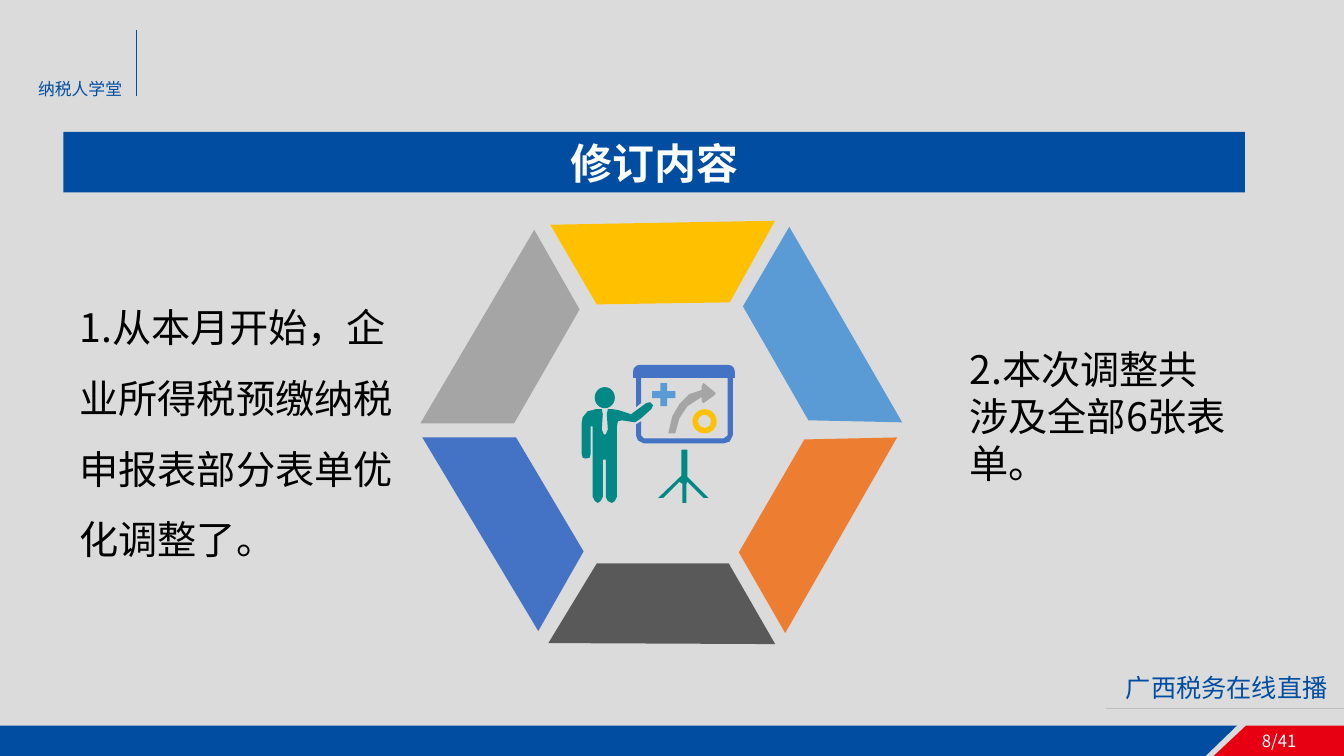
from dataclasses import dataclass

from lxml import etree
from pptx import Presentation
from pptx.dml.color import RGBColor
from pptx.enum.shapes import MSO_CONNECTOR, MSO_SHAPE
from pptx.enum.text import MSO_ANCHOR, PP_ALIGN
from pptx.oxml.ns import qn
from pptx.shapes.autoshape import Shape
from pptx.shapes.shapetree import GroupShapes, SlideShapes
from pptx.util import Emu, Inches, Pt

RECTANGLE = MSO_SHAPE.RECTANGLE
OVAL = MSO_SHAPE.OVAL
DONUT = MSO_SHAPE.DONUT
CROSS = MSO_SHAPE.CROSS
ROUNDED_TOP = MSO_SHAPE.ROUND_2_SAME_RECTANGLE
STRAIGHT = MSO_CONNECTOR.STRAIGHT
LEFT, CENTER = PP_ALIGN.LEFT, PP_ALIGN.CENTER
TOP, MIDDLE = MSO_ANCHOR.TOP, MSO_ANCHOR.MIDDLE

CELL = Inches(0.1)
COLUMNS, ROWS = 133.33, 75
FONT = "Noto Sans CJK SC"
BACKGROUND, BLUE, RED = "DBDBDB", "004DA1", "E60012"
WHITE, BLACK, RULE_GRAY = "FFFFFF", "000000", "BFBFBF"
TEAL, GRAY, GOLD = "028985", "A5A5A5", "FFC000"
SKY, ORANGE, CHARCOAL, ROYAL = "5B9BD5", "ED7D31", "595959", "4472C4"

Shapes = SlideShapes | GroupShapes
Point = tuple[float, float]


@dataclass(frozen=True)
class Area:
    column: float
    row: float
    columns: float
    rows: float


@dataclass(frozen=True)
class Polygon:
    color: str
    corners: list[Point]


@dataclass(frozen=True)
class Preset:
    kind: MSO_SHAPE
    area: Area
    color: str
    adjustments: tuple[float, ...] = ()


@dataclass(frozen=True)
class Rule:
    start: Point
    end: Point
    color: str


@dataclass(frozen=True)
class Label:
    text: str
    area: Area
    size: float
    color: str
    line_spacing: float | None = None
    top_inset: float = 0.5


FOOTER = [
    Polygon(BLUE, [(0, 72), (122.7, 72), (119.6, ROWS), (0, ROWS)]),
    Polygon(RED, [(123.6, 72), (COLUMNS, 72), (COLUMNS, ROWS), (120.4, ROWS)]),
]
RULES = [
    Rule((13.5, 3), (13.5, 9.5), BLUE),
    Rule((109.7, 70.3), (COLUMNS, 70.3), RULE_GRAY),
]
LABELS = [
    Label("8/41", Area(124.2, 72, 8.1, 4), 12, WHITE),
    Label("纳税人学堂", Area(2.8, 7.3, 10.8, 3), 12, BLUE),
    Label("广西税务在线直播", Area(110.7, 66.2, 25.9, 4), 18, BLUE),
    Label("1.从本月开始，企业所得税预缴纳税申报表部分表单优化调整了。",
          Area(6.9, 15.3, 34.8, 53.5), 28, BLACK, 1.5, 12.5),
    Label("2.本次调整共涉及全部6张表单。", Area(95.2, 33.8, 27.8, 18.2), 28, BLACK),
]
BANNER = Preset(RECTANGLE, Area(6.3, 13.1, 117.2, 6), BLUE)
HEXAGON = [
    Polygon(GRAY, [(53, 22.8), (41.7, 42), (51, 42), (57.5, 30.7)]),
    Polygon(GOLD, [(76.9, 21.9), (54.6, 22.3), (59.2, 30.2), (72.4, 30)]),
    Polygon(SKY, [(89.5, 41.9), (78.3, 22.5), (73.7, 30.4), (80.2, 41.7)]),
    Polygon(ORANGE, [(77.9, 62.8), (89, 43.4), (79.8, 43.6), (73.3, 54.8)]),
    Polygon(CHARCOAL, [(54.4, 63.8), (76.9, 63.9), (72.3, 55.9), (59.2, 55.9)]),
    Polygon(ROYAL, [(41.9, 43.4), (53.4, 62.6), (57.9, 54.7), (51.2, 43.4)]),
]
ICON_PRESETS = [
    Preset(OVAL, Area(59, 38.4, 2, 2.1), TEAL),
    Preset(DONUT, Area(68.7, 40.6, 2.4, 2.4), GOLD, (0.23,)),
    Preset(CROSS, Area(64.7, 38, 2.3, 2.3), SKY, (0.35,)),
    Preset(ROUNDED_TOP, Area(62.8, 36.2, 10.1, 1.3), ROYAL, (0.5, 0)),
]
ICON_POLYGONS = [
    Polygon(TEAL, [
        (64.8, 40.2), (64.5, 39.9), (64.1, 40), (62.6, 41.1), (61.4, 40.7),
        (60.8, 40.6), (60.3, 40.6), (60.2, 41.1), (60.3, 42.6), (60.1, 43.1),
        (59.9, 43.1), (59.7, 42.6), (59.8, 41.1), (59.7, 40.6), (59.1, 40.6),
        (58.3, 40.8), (57.8, 41.4), (57.7, 42), (57.7, 45), (57.8, 45.4),
        (58.1, 45.5), (58.5, 45.4), (58.6, 45), (58.6, 42.3), (58.8, 42.3),
        (58.8, 49.3), (59, 49.7), (59.3, 49.9), (59.6, 49.7), (59.8, 49.3),
        (59.8, 45.6), (60.1, 45.6), (60.1, 49.3), (60.3, 49.7), (60.7, 49.9),
        (61, 49.7), (61.2, 49.3), (61.2, 42.3), (61.3, 41.8), (61.7, 41.7),
        (63, 41.9), (63.6, 41.5), (64.6, 40.6)]),
    Polygon(GRAY, [
        (69.6, 38.7), (68.4, 39.1), (67.4, 40.1), (66.7, 41.3), (66.3, 43),
        (67, 43), (67.4, 41.5), (68.2, 40.3), (69.6, 39.4), (69.6, 39.8),
        (69.8, 40), (70.9, 39.2), (71, 39), (70.9, 38.9), (69.8, 38),
        (69.6, 38.3)]),
    Polygon(TEAL, [
        (70.3, 49.4), (68.2, 47.3), (68.2, 44.6), (67.6, 44.6), (67.6, 47.2),
        (65.3, 49.4), (65.8, 49.4), (67.4, 47.8), (67.7, 48), (67.7, 49.9),
        (68.1, 49.9), (68.1, 48), (68.2, 47.8), (69.8, 49.4)]),
    Polygon(ROYAL, [
        (71.8, 36.6), (63.9, 36.6), (63.3, 36.9), (63.1, 37.5), (63.1, 40.4),
        (63.6, 40), (63.6, 37.5), (63.9, 37.2), (71.8, 37.2), (72.2, 37.5),
        (72.2, 43.2), (71.8, 43.5), (63.9, 43.5), (63.6, 43.2), (63.6, 41.8),
        (63.1, 42.1), (63.1, 43.2), (63.3, 43.7), (63.9, 44), (71.8, 44),
        (72.4, 43.8), (72.7, 43.2), (72.7, 37.5), (72.4, 36.9)]),
]


def cells(count: float) -> Emu:
    return Emu(round(count * CELL))


def rgb(code: str) -> RGBColor:
    return RGBColor.from_string(code)


def paint(shape: Shape, color: str) -> None:
    shape.fill.solid()
    shape.fill.fore_color.rgb = rgb(color)
    shape.line.fill.background()
    shape.shadow.inherit = False


def place(area: Area) -> tuple[Emu, Emu, Emu, Emu]:
    return cells(area.column), cells(area.row), cells(area.columns), cells(area.rows)


def draw_polygon(shapes: Shapes, polygon: Polygon) -> None:
    points = [(cells(column), cells(row)) for column, row in polygon.corners]
    builder = shapes.build_freeform(*points[0])
    builder.add_line_segments(points[1:], close=True)
    paint(builder.convert_to_shape(), polygon.color)


def draw_preset(shapes: Shapes, preset: Preset) -> Shape:
    shape = shapes.add_shape(preset.kind, *place(preset.area))
    for index, value in enumerate(preset.adjustments):
        shape.adjustments[index] = value
    paint(shape, preset.color)
    return shape


def draw_rule(shapes: Shapes, rule: Rule) -> None:
    ends = [cells(value) for value in (*rule.start, *rule.end)]
    line = shapes.add_connector(STRAIGHT, *ends)
    line.line.color.rgb = rgb(rule.color)
    line.line.width = Pt(0.5)
    etree.SubElement(line._element.spPr, qn("a:effectLst"))


def write(box: Shape, text: str, *, size: float, color: str, bold: bool = False,
          align: PP_ALIGN = LEFT, anchor: MSO_ANCHOR = TOP,
          line_spacing: float | None = None, top_inset: float = 0.5) -> None:
    frame = box.text_frame
    frame.word_wrap = True
    frame.vertical_anchor = anchor
    frame.margin_top = cells(top_inset)
    para = frame.paragraphs[0]
    para.alignment = align
    para.line_spacing = line_spacing
    span = para.add_run()
    span.text = text
    span.font.size = Pt(size)
    span.font.bold = bold
    span.font.color.rgb = rgb(color)
    span.font.name = FONT
    etree.SubElement(span.font._element, qn("a:ea"), typeface=FONT)


def draw_label(shapes: Shapes, label: Label) -> None:
    box = shapes.add_textbox(*place(label.area))
    write(box, label.text, size=label.size, color=label.color,
          line_spacing=label.line_spacing, top_inset=label.top_inset)


def main() -> None:
    deck = Presentation()
    deck.slide_width, deck.slide_height = cells(COLUMNS), cells(ROWS)
    page = deck.slides.add_slide(deck.slide_layouts[6])
    page.background.fill.solid()
    page.background.fill.fore_color.rgb = rgb(BACKGROUND)
    for polygon in FOOTER:
        draw_polygon(page.shapes, polygon)
    for rule in RULES:
        draw_rule(page.shapes, rule)
    for label in LABELS:
        draw_label(page.shapes, label)
    banner = draw_preset(page.shapes, BANNER)
    write(banner, "修订内容", size=30, color=WHITE, bold=True, align=CENTER, anchor=MIDDLE)
    for polygon in HEXAGON:
        draw_polygon(page.shapes, polygon)
    icon = page.shapes.add_group_shape()
    for polygon in ICON_POLYGONS:
        draw_polygon(icon.shapes, polygon)
    for preset in ICON_PRESETS:
        draw_preset(icon.shapes, preset)
    deck.save("out.pptx")


if __name__ == "__main__":
    main()
